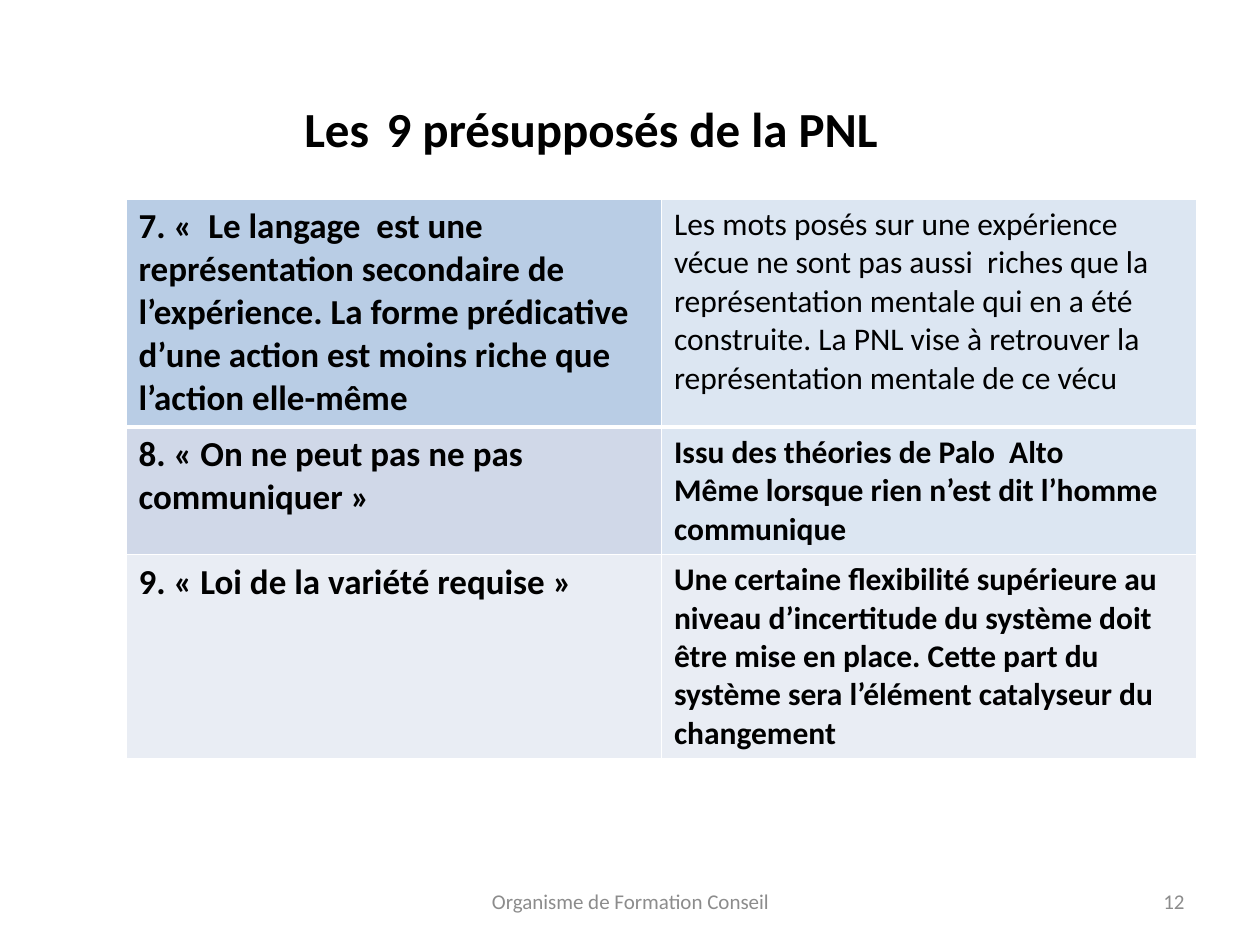
from dataclasses import dataclass

import pptx
import pptx.dml.color
import pptx.enum.text
import pptx.oxml
import pptx.oxml.ns
import pptx.util

Inches = pptx.util.Inches
Pt = pptx.util.Pt
RGB = pptx.dml.color.RGBColor.from_string
ALIGN = pptx.enum.text.PP_ALIGN
MIDDLE = pptx.enum.text.MSO_ANCHOR.MIDDLE


@dataclass(frozen=True)
class Theme:
    font: str = "Calibri"
    ink: str = "000000"
    muted: str = "8C8C8C"
    border: str = "FFFFFF"
    blue: str = "B9CDE5"
    pale_blue: str = "DCE6F2"
    band: str = "D0D8E8"
    pale_band: str = "E9EDF4"
    title: int = 28
    title_gap: int = 44
    premise: int = 20
    comment: int = 18
    footer: int = 12


THEME = Theme()

# Each row: height, then (paragraphs, size, bold, fill) for each cell.
ROWS = [
    (1.81,
     (["7. «  Le langage  est une représentation secondaire de l’expérience. "
       "La forme prédicative d’une action est moins riche que l’action elle-même"],
      THEME.premise, True, THEME.blue),
     (["Les mots posés sur une expérience vécue ne sont pas aussi  riches que la "
       "représentation mentale qui en a été construite. La PNL vise à retrouver la "
       "représentation mentale de ce vécu"],
      THEME.comment, False, THEME.pale_blue)),
    (1.01,
     (["8. « On ne peut pas ne pas communiquer »"],
      THEME.premise, True, THEME.band),
     (["Issu des théories de Palo  Alto",
       "Même lorsque rien n’est dit l’homme communique"],
      THEME.comment, True, THEME.pale_blue)),
    (1.62,
     (["9. « Loi de la variété requise »"],
      THEME.premise, True, THEME.pale_band),
     (["Une certaine flexibilité supérieure au niveau d’incertitude du système doit "
       "être mise en place. Cette part du système sera l’élément catalyseur du "
       "changement"],
      THEME.comment, True, THEME.pale_band)),
]


def add_run(p, text, size, color=THEME.ink, bold=False):
    r = p.add_run()
    r.text = text
    for name, value in {"name": THEME.font, "size": Pt(size), "bold": bold}.items():
        setattr(r.font, name, value)
    r.font.color.rgb = RGB(color)


def place(sp, box):
    for name, value in zip(("left", "top", "width", "height"), box):
        setattr(sp, name, Inches(value))


def add_title(s, box):
    sp = s.shapes.title
    place(sp, box)
    tf = sp.text_frame
    tf.vertical_anchor = MIDDLE
    p = tf.paragraphs[0]
    p.alignment = ALIGN.CENTER
    for text, size in (("Les", THEME.title), (" ", THEME.title_gap),
                       ("9 présupposés de la PNL", THEME.title)):
        add_run(p, text, size, bold=True)


def add_footer(s, box, text, align):
    sp = s.shapes.add_textbox(*map(Inches, box))
    tf = sp.text_frame
    tf.word_wrap = True
    tf.vertical_anchor = MIDDLE
    p = tf.paragraphs[0]
    p.alignment = align
    add_run(p, text, THEME.footer, THEME.muted)


def set_borders(cell, bottom):
    """Draw white cell borders; call before the fill, which must follow them."""
    tc_pr = cell._tc.get_or_add_tcPr()
    for side, width in (("L", 1), ("R", 1), ("T", 1), ("B", bottom)):
        tc_pr.append(pptx.oxml.parse_xml(
            f'<a:ln{side} {pptx.oxml.ns.nsdecls("a")} w="{Pt(width)}">'
            f'<a:solidFill><a:srgbClr val="{THEME.border}"/></a:solidFill>'
            f'</a:ln{side}>'))


def fill_cell(cell, paragraphs, size, bold, fill, bottom):
    set_borders(cell, bottom)
    cell.fill.solid()
    cell.fill.fore_color.rgb = RGB(fill)
    tf = cell.text_frame
    for i, text in enumerate(paragraphs):
        p = tf.add_paragraph() if i else tf.paragraphs[0]
        add_run(p, text, size, bold=bold)


def add_premises(s, box):
    table = s.shapes.add_table(len(ROWS), 2, *map(Inches, box)).table
    for i, (height, *cells) in enumerate(ROWS):
        table.rows[i].height = Inches(height)
        for j, content in enumerate(cells):
            fill_cell(table.cell(i, j), *content, bottom=1 if i else 3)


def main():
    prs = pptx.Presentation()
    prs.slide_width, prs.slide_height = Inches(10), Inches(7.5)
    s = prs.slides.add_slide(prs.slide_layouts[5])
    add_title(s, (0.19, 0.3, 9, 1.25))
    add_footer(s, (3.42, 6.95, 3.17, 0.4), "Organisme de Formation Conseil", ALIGN.CENTER)
    add_footer(s, (7.17, 6.95, 2.33, 0.4), "12", ALIGN.RIGHT)
    add_premises(s, (1, 1.58, 8.5, sum(row[0] for row in ROWS)))
    prs.save("out.pptx")


if __name__ == "__main__":
    main()
